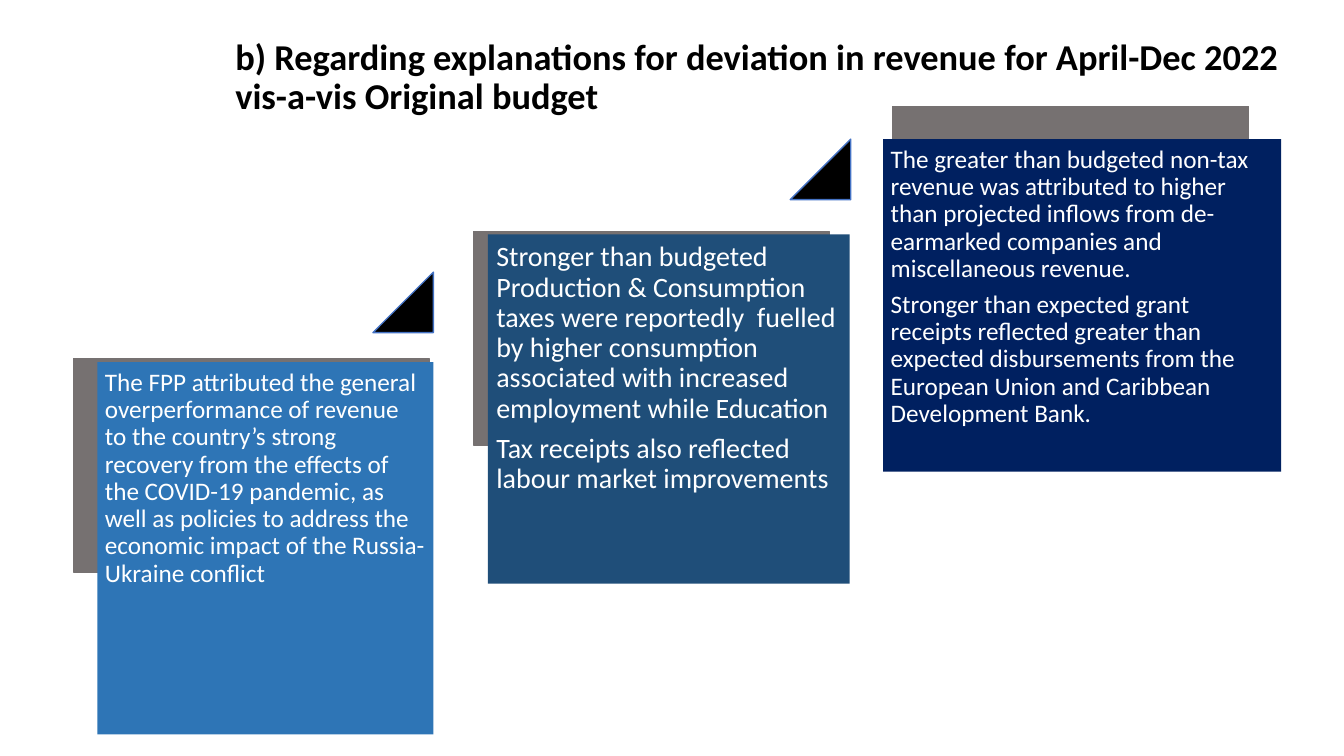
"""Build the slide of revenue deviation explanations as three rising steps."""
from pptx import Presentation
from pptx.dml.color import RGBColor
from pptx.enum.shapes import MSO_SHAPE
from pptx.enum.text import MSO_ANCHOR, PP_ALIGN
from pptx.util import Pt

RECT = MSO_SHAPE.RECTANGLE
CORNER = MSO_SHAPE.CORNER
WEDGE = MSO_SHAPE.ISOSCELES_TRIANGLE
LEFT = PP_ALIGN.LEFT
TOP = MSO_ANCHOR.TOP
MIDDLE = MSO_ANCHOR.MIDDLE
FONT = "Calibri"
COLORS = {
    "black": "000000", "white": "FFFFFF", "gray": "767171", "edge": "4472C4",
    "light": "2E75B6", "mid": "1F4E79", "dark": "002060",
}


def add_form(kind, box, fill, line=None):
    form = slide.shapes.add_shape(kind, *[Pt(n) for n in box])
    form.shadow.inherit = False
    form.fill.solid()
    form.fill.fore_color.rgb = RGBColor.from_string(COLORS[fill])
    if line:
        form.line.color.rgb = RGBColor.from_string(COLORS[line])
        form.line.width = Pt(1)
    else:
        form.line.fill.background()
    return form


def style(para, size, color, bold=False):
    para.alignment = LEFT
    para.line_spacing = 0.9
    para.font.name = FONT
    para.font.size = Pt(size)
    para.font.bold = bold
    para.font.color.rgb = RGBColor.from_string(COLORS[color])


deck = Presentation()
deck.slide_width, deck.slide_height = Pt(960), Pt(540)
slide = deck.slides.add_slide(deck.slide_layouts[5])

title = slide.shapes.title
title.left, title.top, title.width, title.height = Pt(160.9), Pt(25.2), Pt(772), Pt(61.2)
title.text_frame.text = (
    "b) Regarding explanations for deviation in revenue for April-Dec 2022 "
    "vis-a-vis Original budget")
title.text_frame.vertical_anchor = MIDDLE
style(title.text_frame.paragraphs[0], 26, "black", True)

steps = [
    ((103, 205.2), (69.5, 258.7, 240, 266), "light", 18, 5.4, (266.4, 194.4), [
        "The FPP attributed the general overperformance of revenue to the "
        "country’s strong recovery from the effects of the COVID-19 pandemic, "
        "as well as policies to address the economic impact of the "
        "Russia-Ukraine conflict"]),
    ((388.8, 114.5), (348.5, 167.4, 258.5, 249.5), "mid", 20, 6, (564.5, 99.4), [
        "Stronger than budgeted Production & Consumption taxes were reportedly  "
        "fuelled by higher consumption associated with increased employment "
        "while Education",
        "Tax receipts also reflected labour market improvements"]),
    ((688.3, 25.2), (630.8, 99.4, 284.4, 237.6), "dark", 18, 5.4, None, [
        "The greater than budgeted non-tax revenue was attributed to higher "
        "than projected inflows from de-earmarked companies and miscellaneous "
        "revenue.",
        "Stronger than expected grant receipts reflected greater than expected "
        "disbursements from the European Union and Caribbean Development Bank."]),
]

for stair, box, fill, size, pad, wedge, texts in steps:
    corner = add_form(CORNER, (*stair, 152.8, 254.2), "gray", "gray")
    corner.rotation = 90
    corner.adjustments[0] = corner.adjustments[1] = 0.161

    frame = add_form(RECT, box, fill).text_frame
    frame.word_wrap = True
    frame.vertical_anchor = TOP
    frame.margin_left = frame.margin_right = Pt(pad)
    frame.margin_top = frame.margin_bottom = Pt(pad)
    for i, text in enumerate(texts):
        para = frame.add_paragraph() if i else frame.paragraphs[0]
        para.text = text
        para.space_after = Pt(size * 0.35)
        style(para, size, "white")

    if wedge:
        add_form(WEDGE, (*wedge, 43.2, 43.2), "black", "edge").adjustments[0] = 1

deck.save("out.pptx")
